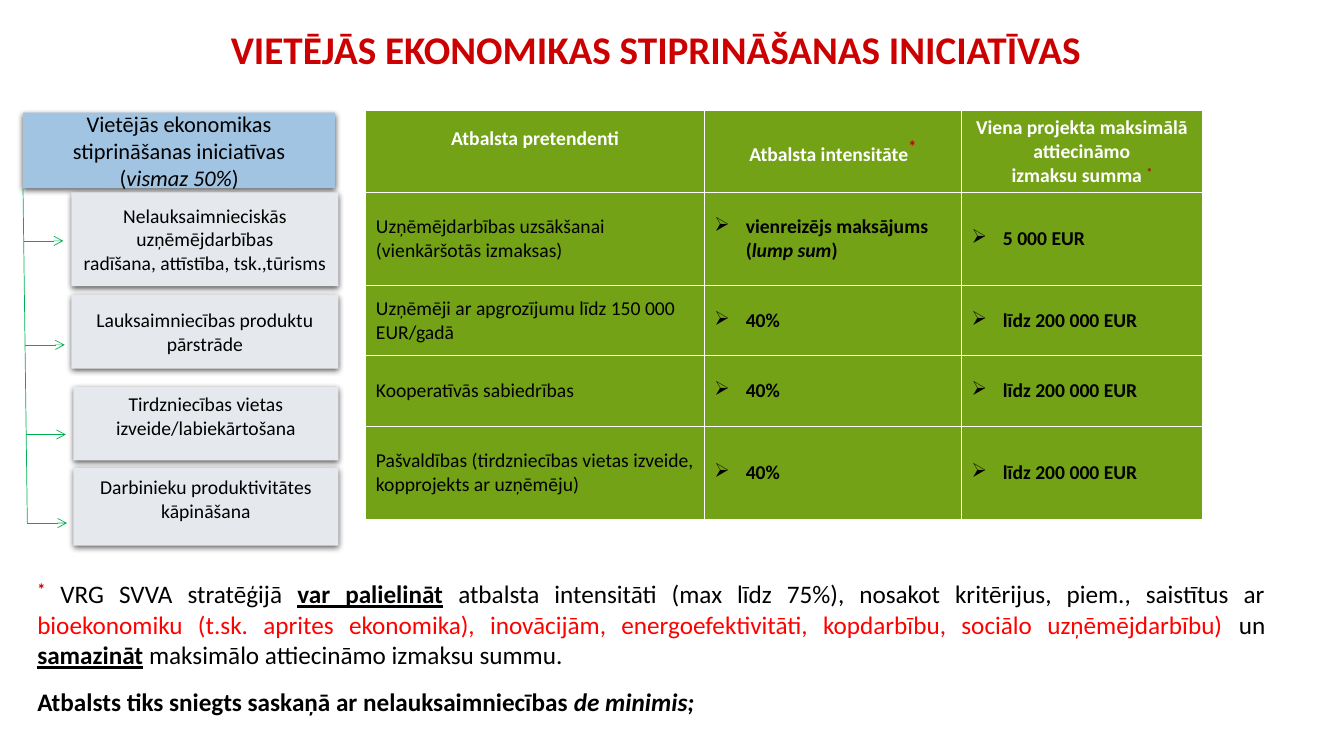
from dataclasses import dataclass

from lxml import etree
from pptx import Presentation
from pptx.dml.color import RGBColor
from pptx.enum.shapes import MSO_CONNECTOR, MSO_SHAPE
from pptx.enum.text import MSO_ANCHOR, PP_ALIGN
from pptx.oxml.ns import qn
from pptx.util import Cm, Pt

LEFT, CENTER, JUSTIFY = PP_ALIGN.LEFT, PP_ALIGN.CENTER, PP_ALIGN.JUSTIFY
MIDDLE, TOP = MSO_ANCHOR.MIDDLE, MSO_ANCHOR.TOP
RECTANGLE, STRAIGHT = MSO_SHAPE.RECTANGLE, MSO_CONNECTOR.STRAIGHT


@dataclass(frozen=True)
class Theme:
    font: str = "Calibri"
    title: str = "CC0000"
    text: str = "000000"
    head_text: str = "FFFFFF"
    star: str = "C00000"
    accent: str = "FF0000"
    initiative: str = "A1C4E3"
    activity: str = "E5E9EE"
    branch: str = "00B050"
    cell: str = "669900"
    title_pt: int = 28
    note_pt: int = 18
    initiative_pt: int = 16
    body_pt: int = 14
    star_pt: int = 20


THEME = Theme()

# A paragraph is a list of (text, marks): b bold, i italic, u underlined,
# r red, s superscript star, S large superscript star.
TITLE = [[("VIETĒJĀS EKONOMIKAS STIPRINĀŠANAS INICIATĪVAS", "")]]
INITIATIVE = [
    [("Vietējās ekonomikas stiprināšanas iniciatīvas", "")],
    [("(", ""), ("vismaz 50%", "i"), (")", "")],
]
# left, top, height, arrow height, extra space below the text, paragraphs
ACTIVITIES = [
    (1.8, 4.85, 2.36, 6.07, 0, ["Nelauksaimnieciskās uzņēmējdarbības",
                                "radīšana, attīstība, tsk.,tūrisms"]),
    (1.8, 7.44, 1.85, 8.69, 0, ["Lauksaimniecības produktu pārstrāde"]),
    (1.85, 9.75, 1.85, 10.95, 0.4, ["Tirdzniecības vietas izveide/labiekārtošana"]),
    (1.85, 11.79, 1.96, 13.18, 0.4, ["Darbinieku produktivitātes kāpināšana"]),
]
HEADINGS = [
    [[("Atbalsta pretendenti", "")]],
    [[("Atbalsta intensitāte", ""), ("*", "S")]],
    [[("Viena projekta maksimālā attiecināmo", "")],
     [("izmaksu summa ", ""), ("*", "s")]],
]
LUMP_SUM = [
    [("vienreizējs maksājums", "")],
    [("(", ""), ("lump sum", "i"), (")", "")],
]
SHARE = [[("40%", "")]]
LIMIT = [[("līdz 200 000 EUR", "")]]
SUPPORT = [
    ([[("Uzņēmējdarbības uzsākšanai", "")], [("(vienkāršotās izmaksas)", "")]],
     LUMP_SUM, [[("5 000 EUR", "")]]),
    ([[("Uzņēmēji ar apgrozījumu līdz 150 000 EUR/gadā", "")]], SHARE, LIMIT),
    ([[("Kooperatīvās sabiedrības", "")]], SHARE, LIMIT),
    ([[("Pašvaldības (tirdzniecības vietas izveide, kopprojekts ar uzņēmēju)", "")]],
     SHARE, LIMIT),
]
NOTES = [
    [("*", "S"), (" VRG SVVA stratēģijā ", ""), ("var palielināt", "bu"),
     (" atbalsta intensitāti (max līdz 75%), nosakot kritērijus, piem., saistītus ar ", ""),
     ("bioekonomiku (t.sk. aprites ekonomika), inovācijām, energoefektivitāti, "
      "kopdarbību, sociālo uzņēmējdarbību) ", "r"),
     ("un ", ""), ("samazināt", "bu"), (" maksimālo attiecināmo izmaksu summu.", "")],
    [("Atbalsts tiks sniegts saskaņā ar nelauksaimniecības ", "b"), ("de minimis;", "bi")],
]

COLUMNS = [8.53, 6.48, 6.07]
ROWS = [2.03, 2.34, 1.78, 1.78, 2.34]
ACTIVITY_RIGHT = 8.53
TRUNK = (0.58, 4.75, 0.69, 13.18)
ARROW_LENGTH = 1
BULLET_INDENT = Cm(0.79)
BOTTOM_INSET = 0.13


def rgb(color):
    return RGBColor.from_string(color)


def mark_run(run, marks):
    font = run.font
    for mark, style in (("b", "bold"), ("i", "italic"), ("u", "underline")):
        if mark in marks:
            setattr(font, style, True)
    if "r" in marks:
        font.color.rgb = rgb(THEME.accent)
    if "s" in marks.lower():
        font.bold = True
        font.color.rgb = rgb(THEME.star)
        run._r.get_or_add_rPr().set("baseline", "30000")
    if "S" in marks:
        font.size = Pt(THEME.star_pt)


def write(frame, paragraphs, size, align=CENTER, color=THEME.text, bold=False, anchor=MIDDLE):
    frame.word_wrap = True
    frame.vertical_anchor = anchor
    for number, runs in enumerate(paragraphs):
        paragraph = frame.paragraphs[0] if number == 0 else frame.add_paragraph()
        paragraph.alignment = align
        font = paragraph.font
        font.name, font.size, font.bold = THEME.font, Pt(size), bold
        font.color.rgb = rgb(color)
        for text, marks in runs:
            run = paragraph.add_run()
            run.text = text
            mark_run(run, marks)


def add_bullet(frame):
    """Bullet the first paragraph and align the others with its text."""
    for number, paragraph in enumerate(frame.paragraphs):
        properties = paragraph._p.get_or_add_pPr()
        properties.set("marL", str(BULLET_INDENT))
        if number == 0:
            properties.set("indent", str(-BULLET_INDENT))
            bullet = etree.Element(qn("a:buChar"), char="➢")
            properties.insert_element_before(bullet, "a:tabLst", "a:defRPr", "a:extLst")


def add_box(slide, left, top, width, height, fill, paragraphs, size, space_below=0):
    box = slide.shapes.add_shape(RECTANGLE, Cm(left), Cm(top), Cm(width), Cm(height))
    box.fill.solid()
    box.fill.fore_color.rgb = rgb(fill)
    box.line.fill.background()
    box.shadow.inherit = False
    effects = box._element.spPr.find(qn("a:effectLst"))
    shadow = etree.SubElement(effects, qn("a:outerShdw"), blurRad=str(Pt(4.5)),
                              dist=str(Pt(1.5)), dir="5400000", rotWithShape="0")
    black = etree.SubElement(shadow, qn("a:srgbClr"), val="000000")
    etree.SubElement(black, qn("a:alpha"), val="63000")
    write(box.text_frame, paragraphs, size)
    box.text_frame.margin_bottom = Cm(BOTTOM_INSET + space_below)


def add_branch(slide, x1, y1, x2, y2, arrow=False):
    branch = slide.shapes.add_connector(STRAIGHT, Cm(x1), Cm(y1), Cm(x2), Cm(y2))
    branch.line.color.rgb = rgb(THEME.branch)
    branch.line.width = Pt(0.5)
    if arrow:
        etree.SubElement(branch.line._get_or_add_ln(), qn("a:tailEnd"), type="arrow")
    etree.SubElement(branch._element.spPr, qn("a:effectLst"))


def add_activities(slide):
    add_box(slide, 0.58, 2.84, 7.87, 1.9, THEME.initiative, INITIATIVE, THEME.initiative_pt)
    add_branch(slide, *TRUNK)
    x1, y1, x2, y2 = TRUNK
    for left, top, height, arrow_y, space_below, lines in ACTIVITIES:
        add_box(slide, left, top, ACTIVITY_RIGHT - left, height, THEME.activity,
                [[(line, "")] for line in lines], THEME.body_pt, space_below)
        start = x1 + (x2 - x1) * (arrow_y - y1) / (y2 - y1)
        add_branch(slide, start, arrow_y, start + ARROW_LENGTH, arrow_y, arrow=True)


def add_support_table(slide):
    table = slide.shapes.add_table(len(ROWS), len(COLUMNS), Cm(9.22), Cm(2.79),
                                   Cm(sum(COLUMNS)), Cm(sum(ROWS))).table
    table.horz_banding = False
    for column, width in zip(table.columns, COLUMNS):
        column.width = Cm(width)
    for row, height in zip(table.rows, ROWS):
        row.height = Cm(height)
    for r, row in enumerate([HEADINGS, *SUPPORT]):
        for c, paragraphs in enumerate(row):
            cell = table.cell(r, c)
            cell.fill.solid()
            cell.fill.fore_color.rgb = rgb(THEME.cell)
            color = cell._tc.tcPr.find(".//" + qn("a:srgbClr"))
            etree.SubElement(color, qn("a:alpha"), val="91000")
            heading = r == 0
            write(cell.text_frame, paragraphs, THEME.body_pt, CENTER if heading else LEFT,
                  THEME.head_text if heading else THEME.text, bold=heading or c > 0)
            cell.vertical_anchor = MIDDLE
            if not heading and c > 0:
                add_bullet(cell.text_frame)
    table.cell(0, 0).margin_bottom = Cm(0.79)


def main():
    deck = Presentation()
    deck.slide_width, deck.slide_height = Cm(33.87), Cm(19.05)
    slide = deck.slides.add_slide(deck.slide_layouts[5])

    title = slide.shapes.title
    title.left, title.top, title.width, title.height = Cm(2.29), Cm(0.64), Cm(28.47), Cm(1.35)
    write(title.text_frame, TITLE, THEME.title_pt, color=THEME.title, bold=True)
    title.text_frame.paragraphs[0].line_spacing = 0.9

    add_activities(slide)
    add_support_table(slide)

    notes = slide.shapes.add_textbox(Cm(0.69), Cm(14.38), Cm(31.45), Cm(3.76)).text_frame
    write(notes, NOTES, THEME.note_pt, JUSTIFY, anchor=TOP)
    notes.paragraphs[1].space_before = Pt(12)
    deck.save("out.pptx")


if __name__ == "__main__":
    main()
